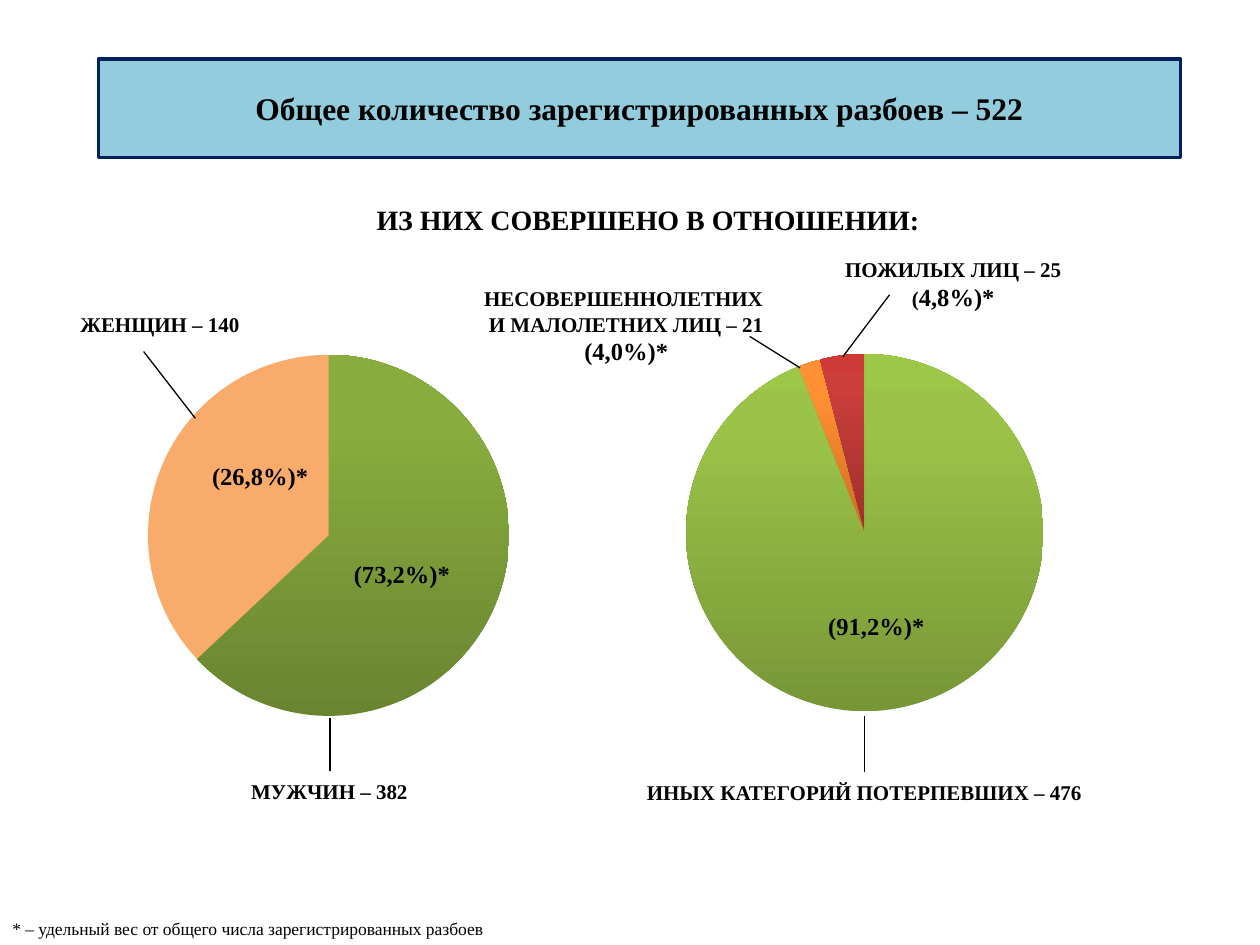
from copy import deepcopy
from dataclasses import dataclass

from lxml import etree
from pptx import Presentation
from pptx import util as u
from pptx.chart.data import CategoryChartData
from pptx.dml.color import RGBColor
from pptx.enum import chart as charts, shapes, text
from pptx.oxml.ns import qn


@dataclass(frozen=True)
class Theme:
    font: str = "Times New Roman"
    chart_font: str = "Calibri"
    ink: str = "000000"
    banner: str = "93CDDD"
    border: str = "002060"
    peach: str = "F9AB6B"
    olive: tuple = ("698530", "88AC3E", "8AAE40")
    green: tuple = ("779737", "9BC348", "9DC746")
    orange: tuple = ("CC6E20", "FF9034", "FF9136")
    red: tuple = ("9C2F2D", "CB3E3A", "CE3B37")
    title: int = 18
    heading: int = 16
    share: int = 14
    label: int = 12
    note: int = 10


class SlideBuilder:
    def __init__(self, slide, theme):
        self.slide = slide
        self.theme = theme

    def add_runs(self, tf, paragraphs, align, bold=True):
        for i, runs in enumerate(paragraphs):
            p = tf.paragraphs[0] if i == 0 else tf.add_paragraph()
            p.alignment = align
            for item in runs:
                if item is None:
                    p.add_line_break()
                    continue
                r = p.add_run()
                r.text, size = item
                r.font.name = self.theme.font
                r.font.size = u.Pt(size)
                r.font.bold = bold
                r.font.color.rgb = RGBColor.from_string(self.theme.ink)

    def title(self, box, words):
        sp = self.slide.shapes.title
        sp.left, sp.top, sp.width, sp.height = map(u.Inches, box)
        geom = etree.SubElement(sp._element.spPr, qn("a:prstGeom"), prst="roundRect")
        etree.SubElement(geom, qn("a:avLst"))
        sp.fill.solid()
        sp.fill.fore_color.rgb = RGBColor.from_string(self.theme.banner)
        sp.line.color.rgb = RGBColor.from_string(self.theme.border)
        sp.line.width = u.Pt(2)
        sp.text_frame.vertical_anchor = text.MSO_ANCHOR.MIDDLE
        self.add_runs(sp.text_frame, [[(words, self.theme.title)]], text.PP_ALIGN.CENTER)

    def text(self, box, paragraphs, align=text.PP_ALIGN.CENTER,
             anchor=text.MSO_ANCHOR.MIDDLE, wrap=True, bold=True):
        sp = self.slide.shapes.add_textbox(*map(u.Inches, box))
        tf = sp.text_frame
        tf.word_wrap = wrap
        tf.vertical_anchor = anchor
        self.add_runs(tf, paragraphs, align, bold)

    def line(self, x1, y1, x2, y2):
        cx = self.slide.shapes.add_connector(
            shapes.MSO_CONNECTOR.STRAIGHT, *map(u.Inches, (x1, y1, x2, y2)))
        cx.line.color.rgb = RGBColor.from_string(self.theme.ink)
        cx.line.width = u.Pt(0.75)
        etree.SubElement(cx._element.spPr, qn("a:effectLst"))

    def gradient(self, fill, colors):
        fill.gradient()
        fill.gradient_angle = 90
        stops = fill._xPr.find(qn("a:gradFill")).find(qn("a:gsLst"))
        stops.append(deepcopy(stops[-1]))
        for stop, color, position in zip(fill.gradient_stops, colors, (0, 0.8, 1)):
            stop.color.rgb = RGBColor.from_string(color)
            stop.position = position

    def pie(self, box, values, colors, plot):
        data = CategoryChartData()
        data.categories = [str(i + 1) for i in range(len(values))]
        data.add_series("Series 1", values)
        chart = self.slide.shapes.add_chart(
            charts.XL_CHART_TYPE.PIE, *map(u.Inches, box), data).chart
        chart.has_title = False
        chart.has_legend = False
        chart.font.name = self.theme.chart_font
        chart.font.size = u.Pt(self.theme.note)
        chart.font.color.rgb = RGBColor.from_string(self.theme.ink)
        chart.plots[0].vary_by_categories = True
        for i, color in enumerate(colors):
            fmt = chart.plots[0].series[0].points[i].format
            fmt.line.fill.background()
            if isinstance(color, tuple):
                self.gradient(fmt.fill, color)
            else:
                fmt.fill.solid()
                fmt.fill.fore_color.rgb = RGBColor.from_string(color)
        area = chart._chartSpace.chart.plotArea
        for old in area.findall(qn("c:layout")):
            area.remove(old)
        layout = etree.Element(qn("c:layout"))
        manual = etree.SubElement(layout, qn("c:manualLayout"))
        settings = [("layoutTarget", "inner"), ("xMode", "edge"), ("yMode", "edge")]
        for tag, value in settings + list(zip("xywh", plot)):
            etree.SubElement(manual, qn(f"c:{tag}"), val=str(value))
        area.insert(0, layout)


def main():
    prs = Presentation()
    prs.slide_width, prs.slide_height = u.Inches(10), u.Inches(7.5)
    th = Theme()
    s = SlideBuilder(prs.slides.add_slide(prs.slide_layouts[5]), th)
    top, left = text.MSO_ANCHOR.TOP, text.PP_ALIGN.LEFT

    s.title((0.78, 0.47, 8.59, 0.78), "Общее количество зарегистрированных разбоев – 522")
    s.text((2.89, 1.56, 4.57, 0.37), [[("ИЗ НИХ СОВЕРШЕНО В ОТНОШЕНИИ:", th.heading)]],
           left, top, wrap=False)
    s.text((0, 7.24, 4.14, 0.26),
           [[("* – удельный вес от общего числа зарегистрированных разбоев", th.note)]],
           left, top, bold=False)

    s.pie((0.42, 2.69, 4.42, 3.15), (63, 37), (th.olive, th.peach),
          (0.17, 0.04, 0.65, 0.91))
    s.pie((4.2, 1.88, 5.38, 4.65), (94, 2, 4), (th.green, th.orange, th.red),
          (0.23, 0.2, 0.53, 0.61))

    s.text((6.57, 1.99, 1.99, 0.52),
           [[("ПОЖИЛЫХ ЛИЦ – 25", th.label), None, ("(", th.label), ("4,8%)*", th.share)]],
           anchor=top)
    s.text((3.73, 2.22, 2.48, 0.71),
           [[("НЕСОВЕРШЕННОЛЕТНИХ ", th.label)],
            [("И МАЛОЛЕТНИХ ЛИЦ – 21", th.label), None, ("(4,0%)*", th.share)]],
           anchor=top)

    for box, words, size in (
        ((2.7, 4.36, 0.98, 0.39), "(73,2%)*", th.share),
        ((1.55, 3.58, 1.03, 0.39), "(26,8%)*", th.share),
        ((6.46, 4.77, 0.99, 0.39), "(91,2%)*", th.share),
        ((0.47, 2.43, 1.6, 0.29), "ЖЕНЩИН – 140", th.label),
        ((1.78, 6.13, 1.67, 0.29), "МУЖЧИН – 382", th.label),
        ((4.73, 6.14, 4.26, 0.29), "ИНЫХ КАТЕГОРИЙ ПОТЕРПЕВШИХ – 476", th.label),
    ):
        s.text(box, [[(words, size)]])

    for ends in (
        (6.69, 2.83, 7.06, 2.34),
        (1.14, 2.79, 1.55, 3.32),
        (2.62, 5.7, 2.62, 6.12),
        (6.86, 5.68, 6.86, 6.13),
        (5.95, 2.67, 6.35, 2.92),
    ):
        s.line(*ends)

    prs.save("out.pptx")


if __name__ == "__main__":
    main()
